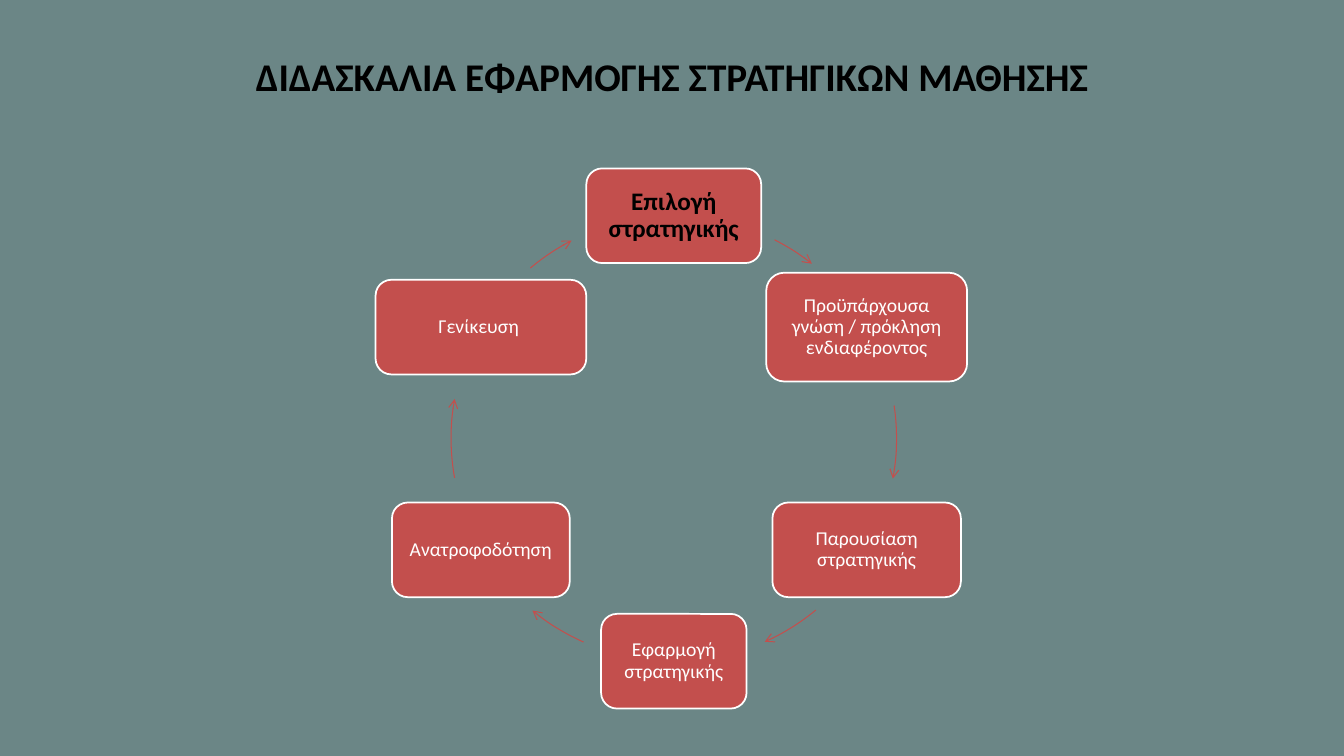
from math import cos, radians, sin

from lxml.etree import SubElement
from pptx import Presentation
from pptx.dml.color import RGBColor
from pptx.enum.shapes import MSO_SHAPE as Shape
from pptx.enum.text import MSO_ANCHOR as Anchor, PP_ALIGN as Align
from pptx.oxml.ns import qn
from pptx.util import Pt

SLATE, RED, WHITE, BLACK = "6B8686", "C34F4D", "FFFFFF", "000000"
CENTER_X, CENTER_Y, RADIUS = 481.3, 313.2, 159.1

STEPS = [
    ("Επιλογή στρατηγικής", 124.9, 67.6),
    ("Προϋπάρχουσα γνώση / πρόκληση ενδιαφέροντος", 143.5, 77.7),
    ("Παρουσίαση στρατηγικής", 134.6, 67.6),
    ("Εφαρμογή στρατηγικής", 103.9, 67.6),
    ("Ανατροφοδότηση ", 127, 67.6),
    ("Γενίκευση ", 150.5, 67.6),
]
ARROW_ANGLES = [
    (296.9, 308.3),
    (351.5, 10.4),
    (50.4, 65.9),
    (113.9, 129.4),
    (169.8, 190.2),
    (229.9, 242.7),
]


def color(hex_value):
    return RGBColor.from_string(hex_value)


class CycleSlide:
    font = "Calibri"

    def __init__(self, slide):
        self.slide = slide
        background = slide.background.fill
        background.solid()
        background.fore_color.rgb = color(SLATE)

    def label(self, frame, text, size, ink, bold, margins=None):
        frame.text = text
        frame.word_wrap = True
        if margins is not None:
            frame.margin_left = frame.margin_right = Pt(margins)
            frame.margin_top = frame.margin_bottom = Pt(margins)
        paragraph = frame.paragraphs[0]
        paragraph.alignment = Align.CENTER
        font = paragraph.runs[0].font
        font.name, font.size, font.bold = self.font, Pt(size), bold
        font.color.rgb = color(ink)
        return paragraph

    def title(self, text, left, top, width, height):
        box = self.slide.shapes.add_textbox(Pt(left), Pt(top), Pt(width), Pt(height))
        self.label(box.text_frame, text, 28, BLACK, True)

    def step(self, text, angle, width, height, size, ink, bold):
        left = CENTER_X + RADIUS * cos(radians(angle)) - width / 2
        top = CENTER_Y + RADIUS * sin(radians(angle)) - height / 2
        card = self.slide.shapes.add_shape(
            Shape.ROUNDED_RECTANGLE, Pt(left), Pt(top), Pt(width), Pt(height))
        card.shadow.inherit = False
        card.fill.solid()
        card.fill.fore_color.rgb = color(RED)
        card.line.color.rgb = color(WHITE)
        card.line.width = Pt(1.25)
        card.text_frame.vertical_anchor = Anchor.MIDDLE
        paragraph = self.label(card.text_frame, text, size, ink, bold, margins=8)
        paragraph.line_spacing = 0.9

    def arrow(self, start, end):
        arc = self.slide.shapes.add_shape(
            Shape.ARC, Pt(CENTER_X - RADIUS), Pt(CENTER_Y - RADIUS),
            Pt(2 * RADIUS), Pt(2 * RADIUS))
        arc.shadow.inherit = False
        arc.adjustments[0] = start * 0.6
        arc.adjustments[1] = end * 0.6
        arc.fill.background()
        arc.line.color.rgb = color(RED)
        arc.line.width = Pt(0.75)
        outline = arc.element.spPr.find(qn("a:ln"))
        SubElement(outline, qn("a:tailEnd"), type="arrow")


def main():
    presentation = Presentation()
    presentation.slide_width, presentation.slide_height = Pt(960), Pt(540)
    cycle = CycleSlide(presentation.slides.add_slide(presentation.slide_layouts[6]))
    for index, ((text, width, height), angles) in enumerate(zip(STEPS, ARROW_ANGLES)):
        size, ink, bold = (18, BLACK, True) if index == 0 else (14, WHITE, False)
        cycle.step(text, 60 * index - 90, width, height, size, ink, bold)
        cycle.arrow(*angles)
    cycle.title("ΔΙΔΑΣΚΑΛΙΑ ΕΦΑΡΜΟΓΗΣ ΣΤΡΑΤΗΓΙΚΩΝ ΜΑΘΗΣΗΣ", 142.6, 33.8, 674.8, 41)
    presentation.save("out.pptx")


if __name__ == "__main__":
    main()
